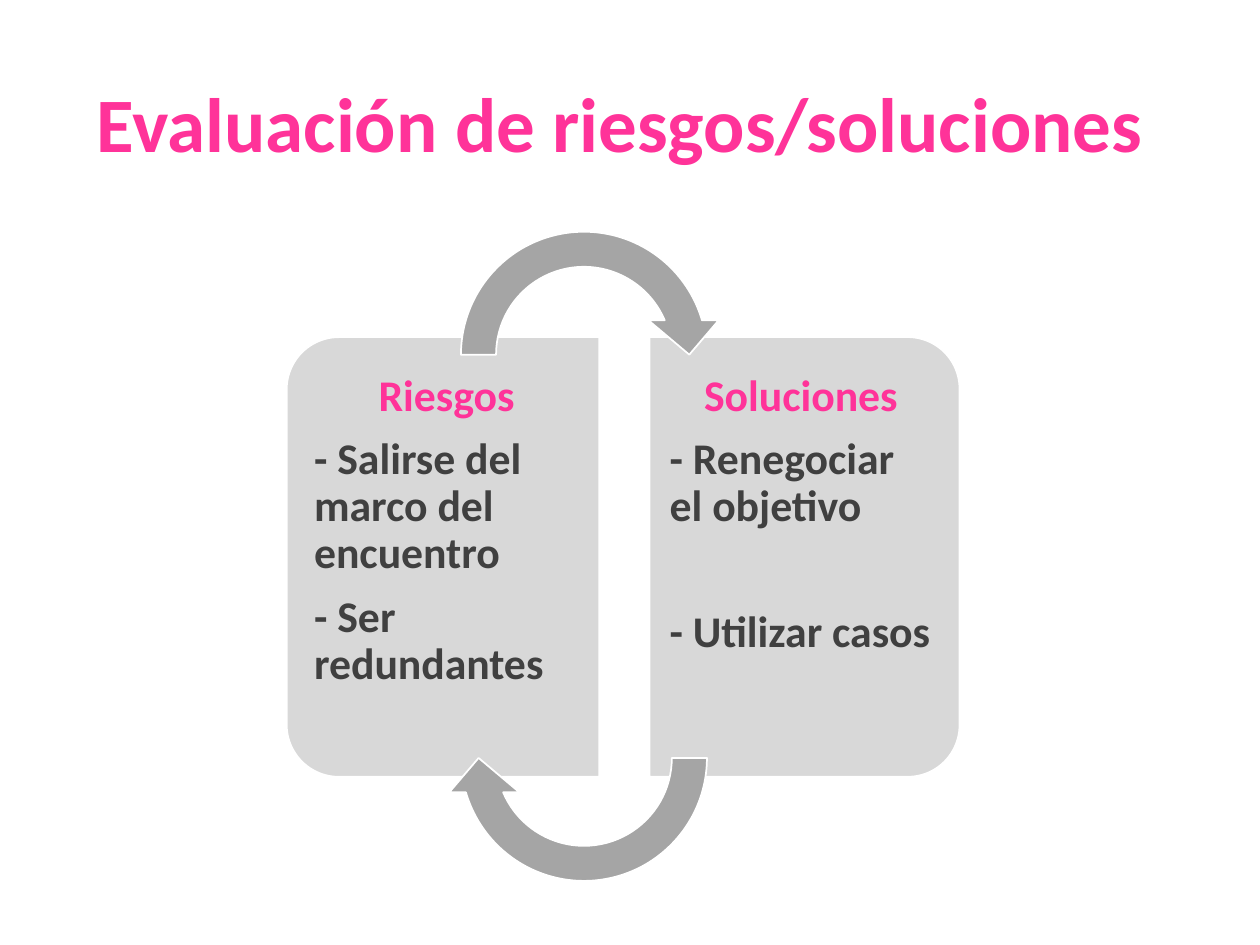
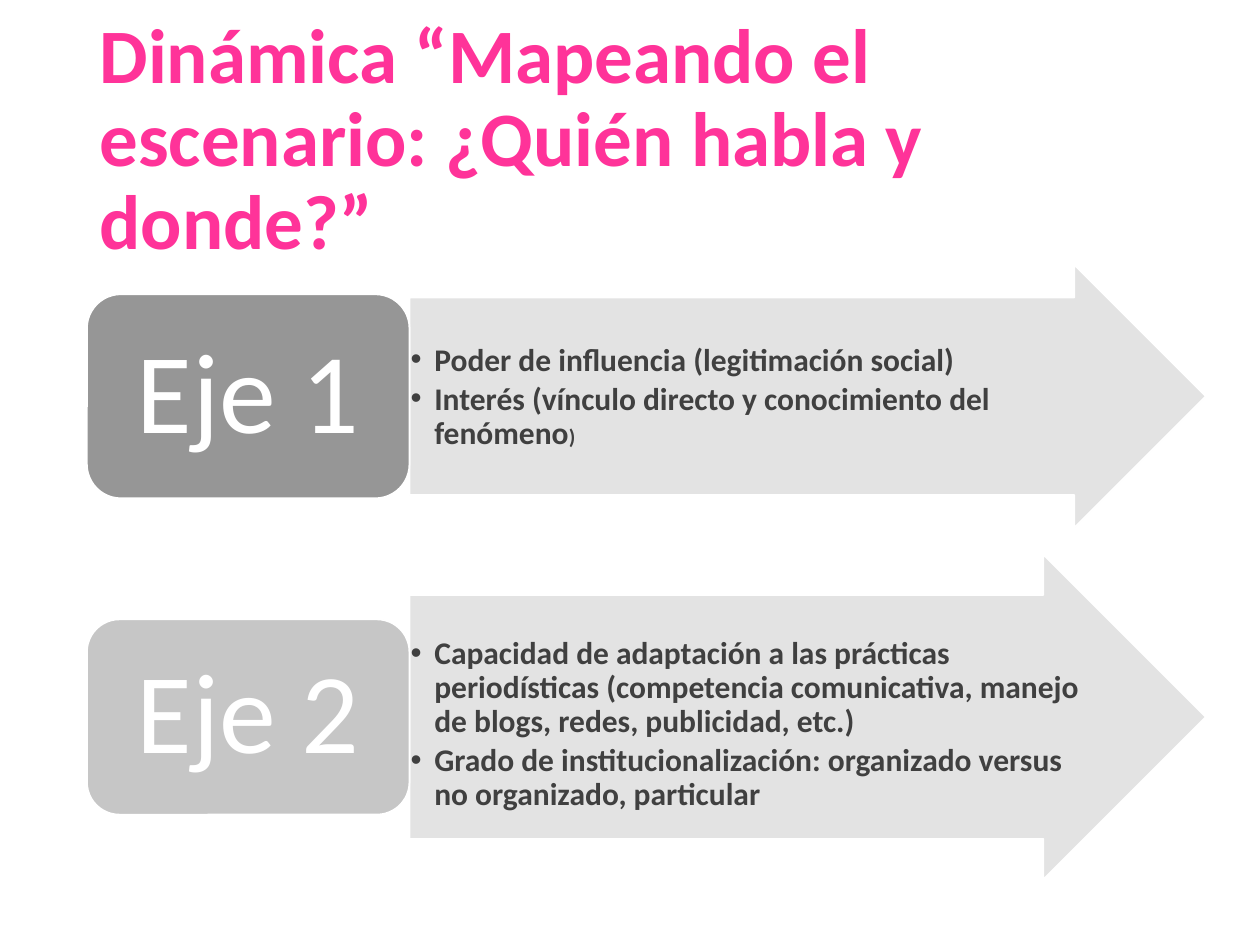
from lxml.etree import SubElement
from pptx import Presentation
from pptx.dml.color import RGBColor
from pptx.enum.shapes import MSO_SHAPE
from pptx.enum.text import MSO_ANCHOR, MSO_AUTO_SIZE, PP_ALIGN
from pptx.oxml.ns import qn
from pptx.util import Pt

FONT = "Calibri"
COLORS = {
    "pink": "FF3399", "ink": "404040", "white": "FFFFFF", "card": "D8D8D8",
    "loop": "A5A5A5", "arrow": "E1E1E1", "dark": "969696", "light": "C6C6C6",
}


def color(name):
    return RGBColor.from_string(COLORS[name])


def add_run(para, text, size, fill, bold):
    run = para.add_run()
    run.text = text
    font = run.font
    font.name, font.size, font.bold = FONT, Pt(size), bold
    font.color.rgb = color(fill)


def write(frame, text, size=25, fill="ink", bold=True, align=PP_ALIGN.LEFT,
          before=0, after=0, bullet=False, tail=None):
    """Add one paragraph; tail is an optional (text, size) closing run."""
    para = frame.paragraphs[0]
    if para.runs:
        para = frame.add_paragraph()
    para.alignment, para.line_spacing = align, 0.9
    para.space_before, para.space_after = Pt(before), Pt(after)
    if bullet:
        props = para._p.get_or_add_pPr()
        props.set("marL", str(Pt(13.5)))
        props.set("indent", str(-Pt(13.5)))
        SubElement(props, qn("a:buFont")).set("typeface", "Arial")
        SubElement(props, qn("a:buChar")).set("char", "•")
    add_run(para, text, size, fill, bold)
    if tail:
        add_run(para, *tail, fill, bold)


def set_frame(frame, left, top, right, bottom, anchor=MSO_ANCHOR.TOP):
    frame.word_wrap, frame.auto_size = True, MSO_AUTO_SIZE.NONE
    frame.vertical_anchor = anchor
    frame.margin_left, frame.margin_top = Pt(left), Pt(top)
    frame.margin_right, frame.margin_bottom = Pt(right), Pt(bottom)


def add_shape(slide, kind, box, fill, adjust=(), turn=0, alpha=None):
    shape = slide.shapes.add_shape(kind, *map(Pt, box))
    shape.shadow.inherit = False
    shape.rotation = turn
    for i, value in enumerate(adjust):
        shape.adjustments[i] = value
    shape.fill.solid()
    shape.fill.fore_color.rgb = color(fill)
    shape.line.color.rgb = color("white")
    shape.line.width = Pt(1)
    if alpha:
        tint = shape.fill._xPr.find(qn("a:solidFill"))[0]
        SubElement(tint, qn("a:alpha")).set("val", str(alpha * 1000))
    return shape


def add_slide(deck, title, left, top):
    slide = deck.slides.add_slide(deck.slide_layouts[5])
    head = slide.shapes.title
    head.left, head.top, head.width, head.height = map(Pt, (left, top, 620.6, 104.4))
    set_frame(head.text_frame, 7.2, 3.6, 7.2, 3.6, MSO_ANCHOR.MIDDLE)
    write(head.text_frame, title, size=44, fill="pink")
    return slide


def add_card(slide, box, head, items, gap=0, right=False):
    """Card rounded on its outer side; gap sets apart the second item."""
    left, top, wide, high = box
    pad = 8.6
    side = (left + (wide - high) / 2, top + (high - wide) / 2, high, wide)
    add_shape(slide, MSO_SHAPE.ROUND_2_SAME_RECTANGLE, side, "card",
              (0.167, 0), 90 if right else 270)
    area = (left + (0 if right else pad), top + pad, wide - pad, high - 2 * pad)
    frame = slide.shapes.add_textbox(*map(Pt, area)).text_frame
    inner, outer = 11.5, 7.2
    edges = (inner, outer) if right else (outer, inner)
    set_frame(frame, edges[0], 12.2, edges[1], 12.2)
    write(frame, head, fill="pink", align=PP_ALIGN.CENTER, after=9.2)
    for i, item in enumerate(items):
        write(frame, item, before=gap * i, after=9.2)


def add_loop(slide, left, top, turn):
    add_shape(slide, MSO_SHAPE.CIRCULAR_ARROW, (left, top, 160.6, 160.6), "loop",
              (0.125, 11.423, 204.577, 108, 0.125), turn)


def add_axis(slide, box, name, fill, label, inset, items):
    """Arrow with bullets and a label block (its height) at the left, centred."""
    left, top, wide, high = box
    block = 184.3
    arrow = add_shape(slide, MSO_SHAPE.RIGHT_ARROW,
                      (left + block, top, wide - block, high), "arrow",
                      (0.75, 0.5), alpha=90)
    set_frame(arrow.text_frame, 0.7, inset, 0.7, 0.7)
    for text, tail in items:
        write(arrow.text_frame, text, size=18, after=2.8, bullet=True, tail=tail)
    tag = add_shape(slide, MSO_SHAPE.ROUNDED_RECTANGLE,
                    (left, top + (high - label) / 2, block, label), fill)
    set_frame(tag.text_frame, 19.4, 10, 19.4, 10, MSO_ANCHOR.MIDDLE)
    write(tag.text_frame, name, size=65, fill="white", bold=False,
          align=PP_ALIGN.CENTER)


def risk_slide(deck):
    slide = add_slide(deck, "Evaluación de riesgos/soluciones", 48.2, 20.9)
    add_card(slide, (163.8, 192.6, 178.6, 251.3), "Riesgos",
             ("- Salirse del marco del encuentro", "- Ser redundantes"))
    add_card(slide, (371.2, 192.6, 177.1, 251.3), "Soluciones",
             ("- Renegociar el objetivo", "- Utilizar casos"), gap=35.5, right=True)
    for top, turn in ((122.4, 0), (352.8, 180)):
        add_loop(slide, 253.4, top, turn)


def axis_slide(deck):
    slide = add_slide(
        deck, "Dinámica “Mapeando el escenario: ¿Quién habla y donde?”", 49.7, 28.8)
    add_axis(slide, (49.7, 151.2, 639.4, 150.5), "Eje 1", "dark", 116.6, 26.5, (
        ("Poder de influencia (legitimación social)", None),
        ("Interés (vínculo directo y conocimiento del fenómeno", (")", 12)),
    ))
    add_axis(slide, (49.7, 316.8, 639.4, 185.8), "Eje 2", "light", 111.6, 24, (
        ("Capacidad de adaptación a las prácticas periodísticas (competencia "
         "comunicativa, manejo de blogs, redes, publicidad, etc.)", None),
        ("Grado de institucionalización: organizado versus no organizado, "
         "particular", None),
    ))


def main():
    deck = Presentation()
    deck.slide_width, deck.slide_height = Pt(720), Pt(540)
    risk_slide(deck)
    axis_slide(deck)
    deck.save("out.pptx")


if __name__ == "__main__":
    main()
